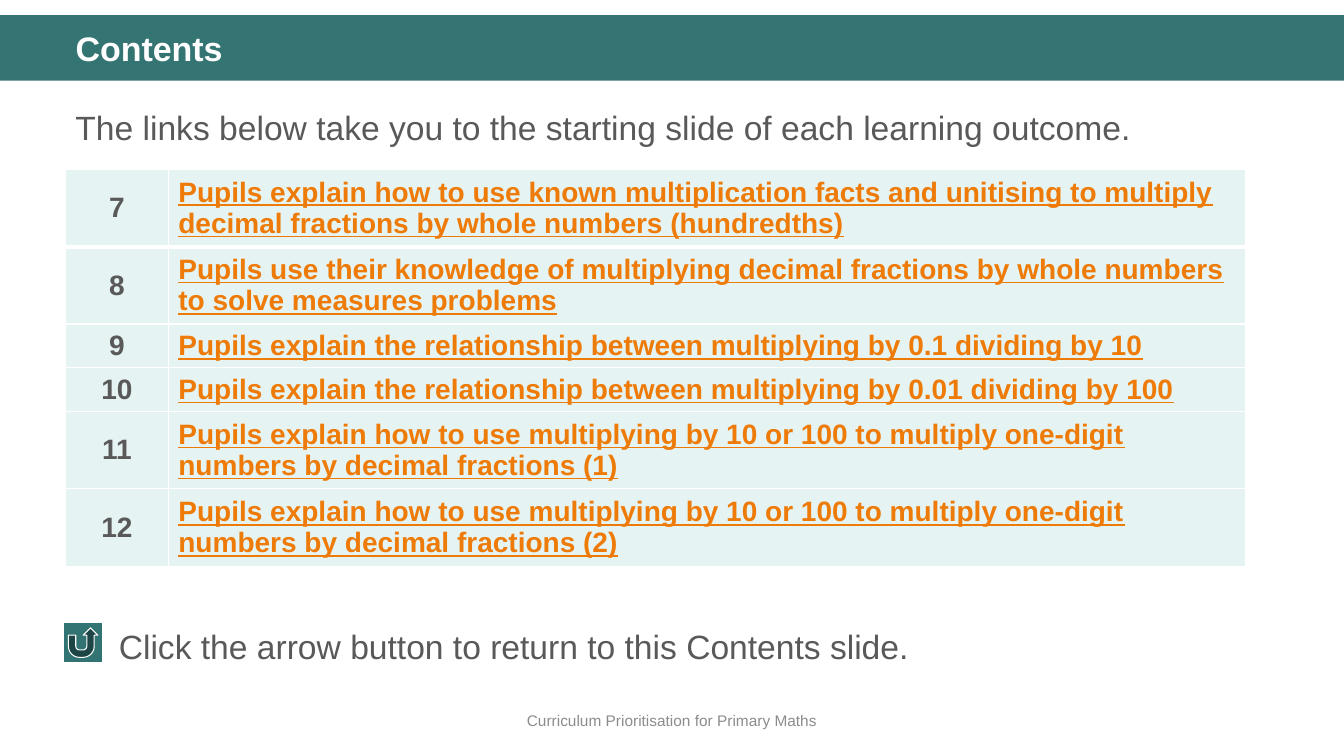
from dataclasses import dataclass

from lxml import etree
from pptx import Presentation
from pptx import util as u
from pptx.dml.color import RGBColor
from pptx.enum import shapes, text
from pptx.oxml import ns

COLUMN = u.Inches(40 / 3) / 40
ROW = u.Inches(7.5) / 30
LEFT = 1.95


@dataclass(frozen=True)
class Theme:
    """Colours, type sizes and font of the deck."""
    font: str = "Arial"
    banner: str = "347574"
    button: str = "327473"
    cell: str = "E5F3F2"
    link: str = "EE7B08"
    body: str = "595959"
    muted: str = "8C8C8C"
    white: str = "FFFFFF"
    title_size: float = 24.3
    body_size: int = 24
    table_size: int = 20
    footer_size: int = 11


THEME = Theme()


@dataclass(frozen=True)
class Box:
    """An area counted in grid columns and rows."""
    x: float
    y: float
    width: float
    height: float

    def inside(self, x, y, width, height):
        """Return a box offset from this one's corner."""
        return Box(self.x + x, self.y + y, width, height)

    def emu(self):
        """Return left, top, width and height as lengths."""
        return (round(self.x * COLUMN), round(self.y * ROW),
                round(self.width * COLUMN), round(self.height * ROW))


OUTCOMES = [
    ("7", "Pupils explain how to use known multiplication facts and unitising "
          "to multiply decimal fractions by whole numbers (hundredths)", 2),
    ("8", "Pupils use their knowledge of multiplying decimal fractions "
          "by whole numbers to solve measures problems", 2),
    ("9", "Pupils explain the relationship between multiplying by 0.1 dividing by 10", 1),
    ("10", "Pupils explain the relationship between multiplying by 0.01 dividing by 100", 1),
    ("11", "Pupils explain how to use multiplying by 10 or 100 to multiply "
           "one-digit numbers by decimal fractions (1)", 2),
    ("12", "Pupils explain how to use multiplying by 10 or 100 to multiply "
           "one-digit numbers by decimal fractions (2)", 2),
]
ROW_HEIGHTS = {1: 1.64, 2: 2.88}


def write(frame, words, size, colour, bold=False, underline=False,
          align=text.PP_ALIGN.LEFT, spacing=1.0):
    """Write one formatted run into a text frame."""
    frame.word_wrap = True
    paragraph = frame.paragraphs[0]
    paragraph.alignment = align
    paragraph.line_spacing = spacing
    run = paragraph.add_run()
    run.text = words
    run.font.name = THEME.font
    run.font.size = u.Pt(size)
    run.font.bold = bold
    run.font.underline = underline
    run.font.color.rgb = RGBColor.from_string(colour)


def add_panel(slide, kind, box, fill):
    """Add a flat filled shape without an outline."""
    shape = slide.shapes.add_shape(kind, *box.emu())
    shape.shadow.inherit = False
    shape.fill.solid()
    shape.fill.fore_color.rgb = RGBColor.from_string(fill)
    shape.line.fill.background()
    return shape


def add_words(slide, box, words, size, colour, anchor=text.MSO_ANCHOR.TOP, **style):
    """Add a text box holding one line of words."""
    frame = slide.shapes.add_textbox(*box.emu()).text_frame
    frame.vertical_anchor = anchor
    write(frame, words, size, colour, **style)


def add_banner(slide, box):
    """Place the coloured band and the slide title on it."""
    banner = add_panel(slide, shapes.MSO_SHAPE.RECTANGLE, box, THEME.banner)
    title = slide.shapes.title
    title.element.addprevious(banner.element)
    title.left, title.top, title.width, title.height = box.inside(
        LEFT, 0.48, 36.54, 1.88).emu()
    frame = title.text_frame
    frame.auto_size = text.MSO_AUTO_SIZE.NONE
    frame.vertical_anchor = text.MSO_ANCHOR.MIDDLE
    write(frame, "Contents", THEME.title_size, THEME.white, bold=True, spacing=0.9)


def set_borders(cell, bottom):
    """Draw white borders around a cell, with a given bottom width."""
    properties = cell._tc.get_or_add_tcPr()
    for position, (side, width) in enumerate(
            {"lnL": 1, "lnR": 1, "lnT": 1, "lnB": bottom}.items()):
        line = etree.Element(ns.qn(f"a:{side}"), w=str(u.Pt(width)))
        fill = etree.SubElement(line, ns.qn("a:solidFill"))
        etree.SubElement(fill, ns.qn("a:srgbClr"), val=THEME.white)
        properties.insert(position, line)


def add_outcomes(slide, box):
    """Place the table of numbered learning outcomes."""
    table = slide.shapes.add_table(len(OUTCOMES), 2, *box.emu()).table
    table.first_row = table.horz_banding = False
    number_width = 3.06
    for column, width in zip(table.columns, (number_width, box.width - number_width)):
        column.width = round(width * COLUMN)
    for index, (number, outcome, lines) in enumerate(OUTCOMES):
        row = table.rows[index]
        row.height = round(ROW_HEIGHTS[lines] * ROW)
        number_cell, outcome_cell = row.cells
        for cell in row.cells:
            cell.fill.solid()
            cell.fill.fore_color.rgb = RGBColor.from_string(THEME.cell)
            cell.vertical_anchor = text.MSO_ANCHOR.MIDDLE
            set_borders(cell, bottom=1 if index else 3)
        write(number_cell.text_frame, number, THEME.table_size, THEME.body,
              bold=True, align=text.PP_ALIGN.CENTER)
        write(outcome_cell.text_frame, outcome, THEME.table_size, THEME.link,
              bold=True, underline=True)


def add_return_hint(slide, box):
    """Place the return button and its explanation."""
    button = add_panel(slide, shapes.MSO_SHAPE.ACTION_BUTTON_RETURN,
                       box.inside(0, 0.08, 1.17, 1.56), THEME.button)
    button.line.color.rgb = RGBColor.from_string(THEME.white)
    button.line.width = u.Pt(0.75)
    add_words(slide, box.inside(1.35, 0, box.width - 1.35, box.height),
              "Click the arrow button to return to this Contents slide.",
              THEME.body_size, THEME.body)


def add_contents_slide(presentation):
    """Build the contents slide from its regions."""
    slide = presentation.slides.add_slide(presentation.slide_layouts[5])
    add_banner(slide, Box(0, 0.6, 40, 2.6))
    add_words(slide, Box(LEFT, 3.72, 36.54, 2.4),
              "The links below take you to the starting slide of each learning outcome.",
              THEME.body_size, THEME.body, spacing=1.2)
    table_height = sum(ROW_HEIGHTS[lines] for *_, lines in OUTCOMES)
    add_outcomes(slide, Box(LEFT, 6.72, 35.13, table_height))
    add_return_hint(slide, Box(1.89, 24.64, 35.31, 2))
    add_words(slide, Box(0, 27.8, 40, 1.6), "Curriculum Prioritisation for Primary Maths",
              THEME.footer_size, THEME.muted, anchor=text.MSO_ANCHOR.MIDDLE,
              align=text.PP_ALIGN.CENTER)


def main():
    """Create and save the presentation."""
    presentation = Presentation()
    presentation.slide_width = round(40 * COLUMN)
    presentation.slide_height = round(30 * ROW)
    add_contents_slide(presentation)
    presentation.save("out.pptx")


if __name__ == "__main__":
    main()
